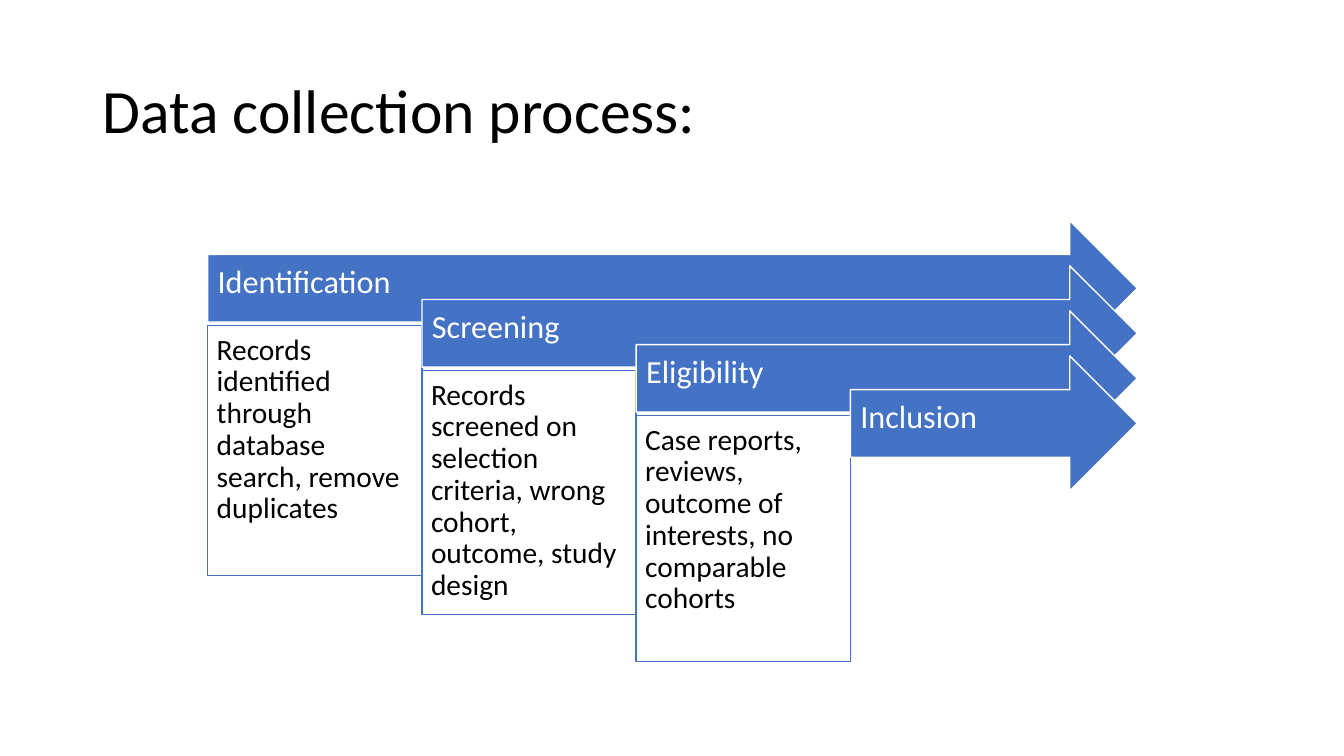
import pptx
import pptx.dml.color
import pptx.enum.shapes
import pptx.enum.text
import pptx.util

Inch = pptx.util.Inches
Kind = pptx.enum.shapes.MSO_SHAPE
Anchor = pptx.enum.text.MSO_ANCHOR


def paint(shape, fill, line):
    shape.shadow.inherit = False
    shape.fill.solid()
    shape.fill.fore_color.rgb = pptx.dml.color.RGBColor.from_string(fill)
    shape.line.color.rgb = pptx.dml.color.RGBColor.from_string(line)
    shape.line.width = pptx.util.Pt(1)


def write(shape, text, size, color="000000", anchor=Anchor.TOP, pad=(0.09,) * 4):
    frame = shape.text_frame
    frame.word_wrap = True
    frame.vertical_anchor = anchor
    frame.margin_left, frame.margin_top, frame.margin_right, frame.margin_bottom = map(Inch, pad)
    para = frame.paragraphs[0]
    para.alignment = pptx.enum.text.PP_ALIGN.LEFT
    para.line_spacing = 0.9
    run = para.add_run()
    run.text = text
    run.font.name = "Calibri"
    run.font.size = pptx.util.Pt(size)
    run.font.color.rgb = pptx.dml.color.RGBColor.from_string(color)


deck = pptx.Presentation()
deck.slide_width, deck.slide_height = Inch(13.33), Inch(7.5)
slide = deck.slides.add_slide(deck.slide_layouts[6])
shapes = slide.shapes

# Title
title = shapes.add_textbox(Inch(0.92), Inch(0.4), Inch(11.5), Inch(1.45))
write(title, "Data collection process:", 44, anchor=Anchor.MIDDLE, pad=(0.1, 0.05, 0.1, 0.05))

# Stages: name, details, height of the details box
stages = [
    ("Identification", "Records identified through database search, remove duplicates", 2.48),
    ("Screening", "Records screened on selection criteria, wrong cohort, outcome, study design", 2.42),
    ("Eligibility", "Case reports, reviews, outcome of interests, no comparable cohorts", 2.44),
    ("Inclusion", None, 0),
]

# Grid: each stage steps one column right and one row down
left, top, right = 2.06, 2.19, 11.28
col, row = 2.125, 0.447
high, drop = 1.34, 1.04

for i, (name, note, tall) in enumerate(stages):
    x, y = left + i * col, top + i * row

    # Arrow, with a shared tip line at the right
    arrow = shapes.add_shape(Kind.RIGHT_ARROW, Inch(x), Inch(y), Inch(right - x), Inch(high))
    paint(arrow, "4472C4", "FFFFFF")
    write(arrow, name, 23, color="FFFFFF", anchor=Anchor.MIDDLE, pad=(0.1, 0.1, 0.28, 0.21))

    # Details below the arrow
    if note:
        box = shapes.add_shape(Kind.RECTANGLE, Inch(x), Inch(y + drop), Inch(col), Inch(tall))
        paint(box, "FFFFFF", "4472C4")
        write(box, note, 21)

deck.save("out.pptx")
